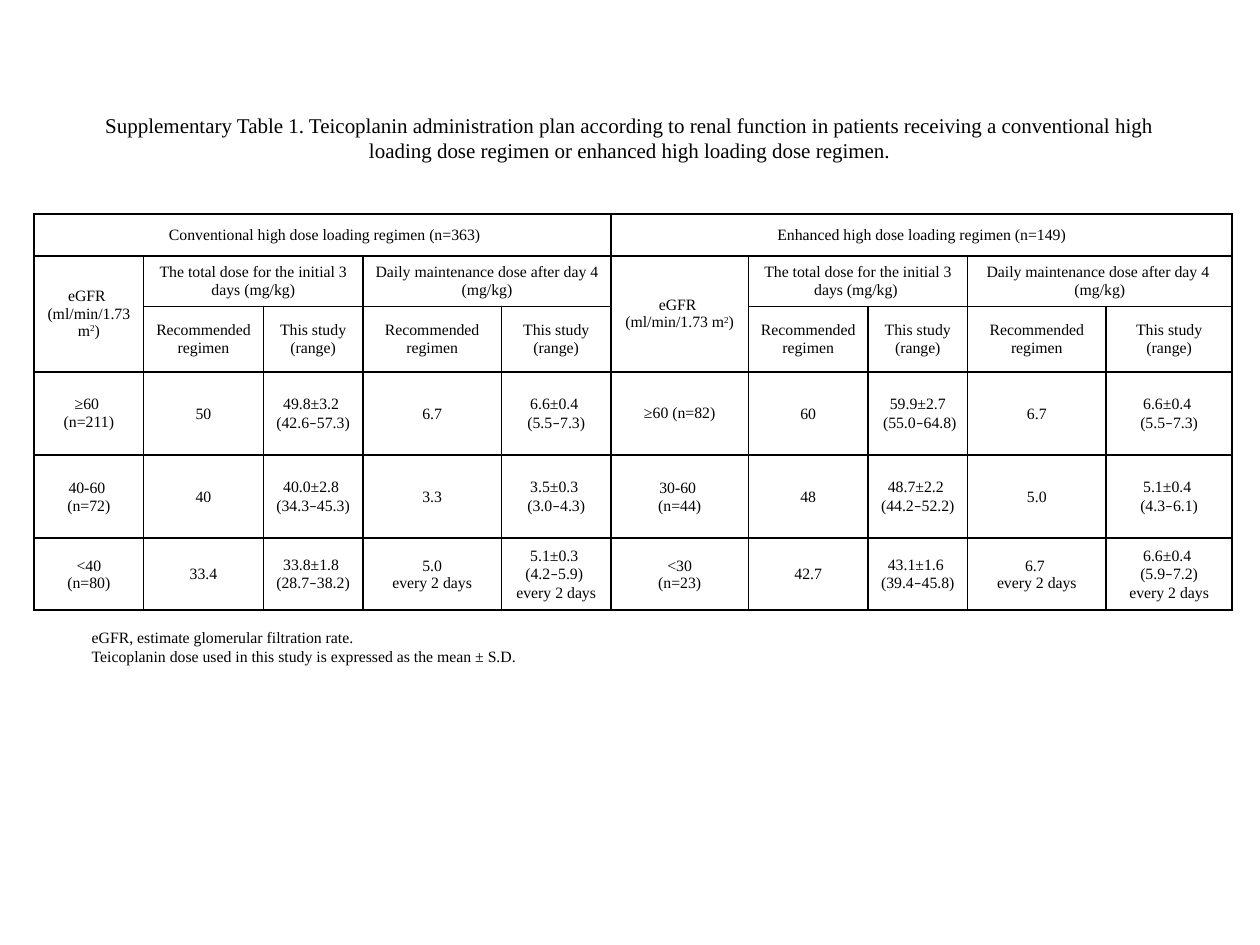
from itertools import groupby

from lxml import etree
from pptx import Presentation
from pptx import util as u
from pptx.dml import color
from pptx.enum import text
from pptx.oxml import ns

# Content
TITLE = ("Supplementary Table 1. Teicoplanin administration plan according to renal "
         "function in patients receiving a conventional high loading dose regimen or "
         "enhanced high loading dose regimen.")
NOTES = ("eGFR, estimate glomerular filtration rate.\n"
         "Teicoplanin dose used in this study is expressed as the mean ± S.D.")
RENAL = "eGFR \n(ml/min/1.73 m²)"
SUBHEADS = ["Recommended regimen", "This study\n(range)"]
REGIMENS = [
    {"name": " Conventional high dose loading regimen (n=363)",
     "doses": ["The total dose for the initial 3 days (mg/kg)",
               "Daily maintenance dose after day 4  (mg/kg) "],
     "rows": [
         ["≥60 \n(n=211)", "50", "49.8±3.2 \n(42.6–57.3)", "6.7", "6.6±0.4 \n(5.5–7.3)"],
         ["40-60 \n(n=72)", "40", "40.0±2.8 \n(34.3–45.3)", "3.3", "3.5±0.3 \n(3.0–4.3)"],
         [" <40 \n(n=80)", "33.4", "33.8±1.8 \n(28.7–38.2)", "5.0\nevery 2 days",
          "5.1±0.3 \n(4.2–5.9) \nevery 2 days"]]},
    {"name": "Enhanced high dose loading regimen (n=149)",
     "doses": ["The total dose for the initial 3 days (mg/kg) ",
               "Daily maintenance dose after day 4  (mg/kg)"],
     "rows": [
         ["≥60 (n=82)", "60", "59.9±2.7\n (55.0–64.8)", "6.7", "6.6±0.4 \n(5.5–7.3)"],
         ["30-60 \n(n=44)", "48", "48.7±2.2 \n(44.2–52.2)", "5.0", "5.1±0.4 \n(4.3–6.1)"],
         [" <30 \n(n=23)", "42.7", "43.1±1.6 \n(39.4–45.8)", "6.7 \nevery 2 days",
          "6.6±0.4 \n(5.9–7.2)\nevery 2 days"]]},
]

# Theme and grid, in points and inches
THEME = {"font": "Times New Roman", "dash_font": "Calibri", "ink": "000000",
         "title": 12, "body": 9, "border": 1}
COLUMNS = [0.87, 0.95, 0.79, 1.1, 0.87, 1.09, 0.95, 0.79, 1.1, 1]
ROWS = [0.33, 0.4, 0.52, 0.66, 0.66, 0.57]
TABLE_LEFT, TABLE_TOP = 0.27, 1.7
HEAD_ROWS, BLOCK = 3, 5
MARKS = "–²"


def write(frame, content, size, align):
    """Fill a frame line by line, giving dashes and superscripts their own runs."""
    lines = content.split("\n")
    for index, line in enumerate(lines):
        para = frame.paragraphs[0] if index == 0 else frame.add_paragraph()
        para.alignment = align
        for mark, letters in groupby(line, key=lambda c: c if c in MARKS else ""):
            span = para.add_run()
            span.text = "2" if mark == "²" else "".join(letters)
            span.font.size = u.Pt(size)
            span.font.name = THEME["dash_font"] if mark == "–" else THEME["font"]
            span.font.color.rgb = color.RGBColor.from_string(THEME["ink"])
            if mark == "²":
                span.font._element.set("baseline", "30000")


def add_text(page, place, content, size, align, anchor):
    box = page.shapes.add_textbox(*(u.Inches(v) for v in place))
    box.text_frame.word_wrap = True
    box.text_frame.vertical_anchor = anchor
    write(box.text_frame, content, size, align)


def outline(cell):
    """Clear the fill and draw all four borders."""
    properties = cell._tc.get_or_add_tcPr()
    for side in ("lnL", "lnR", "lnT", "lnB"):
        line = etree.SubElement(properties, ns.qn("a:" + side),
                                w=str(u.Pt(THEME["border"])))
        fill = etree.SubElement(line, ns.qn("a:solidFill"))
        etree.SubElement(fill, ns.qn("a:srgbClr"), val=THEME["ink"])
    cell.fill.background()


def layout_cells():
    """Yield row, column, row span, column span and text of every cell."""
    for number, regimen in enumerate(REGIMENS):
        first = number * BLOCK
        yield 0, first, 1, BLOCK, regimen["name"]
        yield 1, first, 2, 1, RENAL
        for pair, dose in enumerate(regimen["doses"]):
            column = first + 1 + 2 * pair
            yield 1, column, 1, 2, dose
            for offset, label in enumerate(SUBHEADS):
                yield 2, column + offset, 1, 1, label
        for row, values in enumerate(regimen["rows"], HEAD_ROWS):
            for offset, value in enumerate(values):
                yield row, first + offset, 1, 1, value


def add_dose_table(page):
    frame = page.shapes.add_table(
        len(ROWS), len(COLUMNS), u.Inches(TABLE_LEFT), u.Inches(TABLE_TOP),
        u.Inches(sum(COLUMNS)), u.Inches(sum(ROWS)))
    table = frame.table
    table.first_row = table.horz_banding = False
    for column, width in zip(table.columns, COLUMNS):
        column.width = u.Inches(width)
    for row, height in zip(table.rows, ROWS):
        row.height = u.Inches(height)
    for cell in table.iter_cells():
        outline(cell)
    for row, column, down, across, content in layout_cells():
        cell = table.cell(row, column)
        if down * across > 1:
            cell.merge(table.cell(row + down - 1, column + across - 1))
        cell.vertical_anchor = text.MSO_ANCHOR.MIDDLE
        # Data cells are tight, apart from the first group labels
        if row > HEAD_ROWS or (row == HEAD_ROWS and column % BLOCK):
            cell.margin_left = cell.margin_right = cell.margin_top = u.Inches(0.01)
            cell.margin_bottom = 0
        write(cell.text_frame, content, THEME["body"], text.PP_ALIGN.CENTER)


def main():
    deck = Presentation()
    deck.slide_width, deck.slide_height = u.Inches(10), u.Inches(7.5)
    page = deck.slides.add_slide(deck.slide_layouts[6])
    # Title, table, footnotes
    add_text(page, (0.5, 0.77, 9, 0.64), TITLE, THEME["title"],
             text.PP_ALIGN.CENTER, text.MSO_ANCHOR.MIDDLE)
    add_dose_table(page)
    add_text(page, (0.63, 4.93, 8.87, 0.4), NOTES, THEME["body"],
             text.PP_ALIGN.LEFT, text.MSO_ANCHOR.TOP)
    deck.save("out.pptx")


if __name__ == "__main__":
    main()
